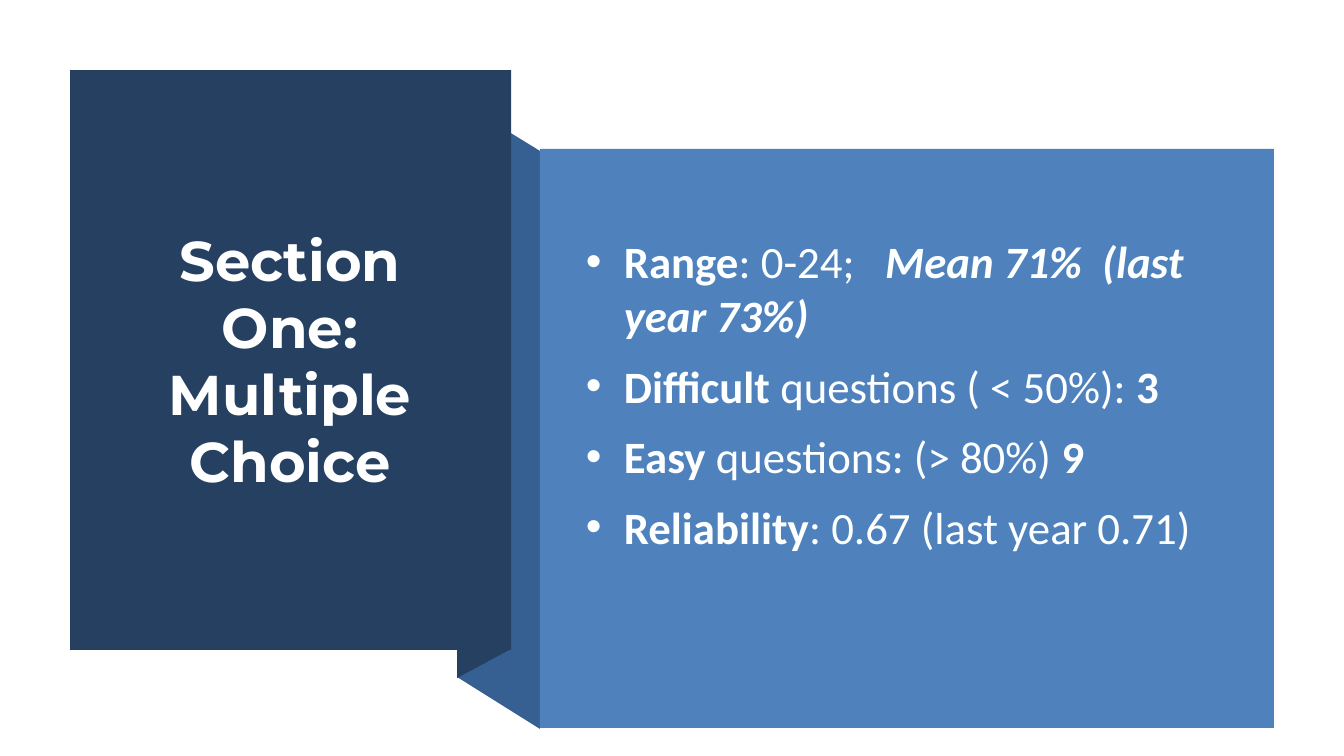
from dataclasses import dataclass
from lxml import etree
from pptx import Presentation
from pptx import util as u
from pptx.dml.color import RGBColor
from pptx.enum import shapes, text
from pptx.oxml import ns


@dataclass(frozen=True)
class Theme:
    navy: str = "254061"
    fold: str = "376092"
    panel: str = "4F81BD"
    white: str = "FFFFFF"
    soft: str = "FEFFFF"
    head: str = "Montserrat"
    body: str = "Calibri"
    big: int = 40
    mid: int = 32
    gap: int = 12


THEME = Theme()
SCALE = 914400 / 100.8
SIZE = (1344, 756)
TITLE = "Section One: Multiple Choice"
POINTS = [
    [("Range", "b"), (": 0-24;   ", ""), ("Mean 71%  (last year 73%)", "bi")],
    [("Difficult", "b"), (" questions ( < 50%): ", ""), ("3", "b")],
    [("Easy", "b"), (" questions: (> 80%) ", ""), ("9", "b")],
    [("Reliability", "b"), (": 0.67 (last year 0.71)", "")],
]
FOLDS = [
    (THEME.fold, [(540, 729), (457, 677), (457, 100), (540, 151)]),
    (THEME.navy, [(511, 649), (457, 678), (457, 99), (511, 70)]),
]
BLOCKS = [
    (THEME.navy, (70, 70, 441, 580)),
    (THEME.panel, (540, 149, 734, 579)),
]
TITLE_BOX = (103, 108, 374, 503)
BODY_BOX = (576, 190, 676, 407)
INDENT = 38


def px(n):
    return u.Emu(round(n * SCALE))


def paint(shape, color):
    shape.shadow.inherit = False
    shape.fill.solid()
    shape.fill.fore_color.rgb = RGBColor.from_string(color)
    shape.line.fill.background()


def style(para, face, size, color):
    para.font.name = face
    para.font.size = u.Pt(size)
    para.font.color.rgb = RGBColor.from_string(color)


def setup(frame):
    frame.word_wrap = True
    frame.auto_size = text.MSO_AUTO_SIZE.NONE
    frame.vertical_anchor = text.MSO_ANCHOR.MIDDLE


def bullet(para):
    props = para._p.get_or_add_pPr()
    props.set("marL", str(px(INDENT)))
    props.set("indent", str(-px(INDENT)))
    font = etree.Element(ns.qn("a:buFont"), typeface="Arial")
    mark = etree.Element(ns.qn("a:buChar"), char="•")
    rest = props.find(ns.qn("a:defRPr"))
    rest.addprevious(font)
    rest.addprevious(mark)


def main():
    deck = Presentation()
    deck.slide_width, deck.slide_height = map(px, SIZE)
    slide = deck.slides.add_slide(deck.slide_layouts[5])
    tree = slide.shapes

    for color, (start, *rest) in FOLDS:
        path = tree.build_freeform(*start, scale=SCALE)
        path.add_line_segments(rest, close=True)
        paint(path.convert_to_shape(), color)

    for color, box in BLOCKS:
        paint(tree.add_shape(shapes.MSO_SHAPE.RECTANGLE, *map(px, box)), color)

    title = tree.title
    title.left, title.top, title.width, title.height = map(px, TITLE_BOX)
    title.text = TITLE
    setup(title.text_frame)
    para = title.text_frame.paragraphs[0]
    para.alignment = text.PP_ALIGN.CENTER
    style(para, THEME.head, THEME.big, THEME.white)
    para.font.bold = True
    tree._spTree.append(title._element)

    frame = tree.add_textbox(*map(px, BODY_BOX)).text_frame
    setup(frame)
    for i, point in enumerate(POINTS):
        para = frame.add_paragraph() if i else frame.paragraphs[0]
        para.space_after = u.Pt(THEME.gap)
        style(para, THEME.body, THEME.mid, THEME.soft)
        bullet(para)
        for words, look in point:
            run = para.add_run()
            run.text = words
            run.font.bold = "b" in look
            run.font.italic = "i" in look

    deck.save("out.pptx")


if __name__ == "__main__":
    main()
